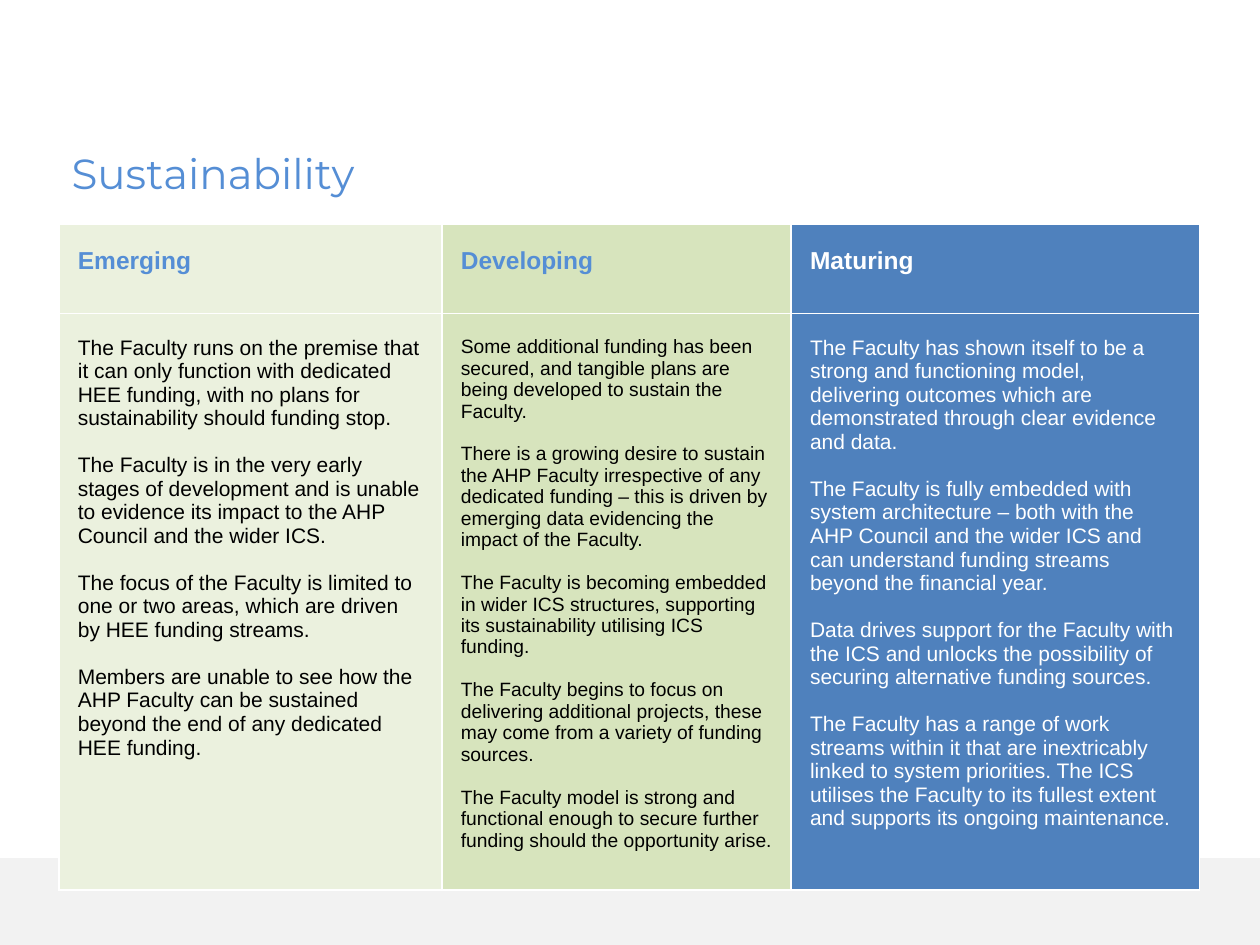
import pptx
import pptx.dml.color
import pptx.enum.shapes
import pptx.enum.text
import pptx.oxml
import pptx.oxml.ns
import pptx.util
from pptx.util import Cm, Pt

# Content
TITLE = "Sustainability"
STAGES = [
    dict(heading="Emerging", width=7.72, fill="EBF1DE", heading_color="558ED5",
         body_color="000000", size=12, body=[
        "The Faculty runs on the premise that it can only function with dedicated HEE funding, with no plans for sustainability should funding stop.",
        "The Faculty is in the very early stages of development and is unable to evidence its impact to the AHP Council and the wider ICS.",
        "The focus of the Faculty is limited to one or two areas, which are driven by HEE funding streams.",
        "Members are unable to see how the AHP Faculty can be sustained beyond the end of any dedicated HEE funding.",
    ]),
    dict(heading="Developing", width=7.04, fill="D7E4BD", heading_color="558ED5",
         body_color="000000", size=11, body=[
        "Some additional funding has been secured, and tangible plans are being developed to sustain the Faculty.",
        "There is a growing desire to sustain the AHP Faculty irrespective of any dedicated funding – this is driven by emerging data evidencing the impact of the Faculty.",
        "The Faculty is becoming embedded in wider ICS structures, supporting its sustainability utilising ICS funding.",
        "The Faculty begins to focus on delivering additional projects, these may come from a variety of funding sources.",
        "The Faculty model is strong and functional enough to secure further funding should the opportunity arise.",
    ]),
    dict(heading="Maturing", width=8.23, fill="4F81BD", heading_color="FFFFFF",
         body_color="FFFFFF", size=12, body=[
        "The Faculty has shown itself to be a strong and functioning model, delivering outcomes which are demonstrated through clear evidence and data.",
        "The Faculty is fully embedded with system architecture – both with the AHP Council and the wider ICS and can understand funding streams beyond the financial year.",
        "Data drives support for the Faculty with the ICS and unlocks the possibility of securing alternative funding sources.",
        "The Faculty has a range of work streams within it that are inextricably linked to system priorities. The ICS utilises the Faculty to its fullest extent and supports its ongoing maintenance.",
    ]),
]
ROW_HEIGHTS = [1.8, 11.05]
LEFT = 1.19
LINE_HEIGHT = 1.12  # one line, relative to the text size


def set_color(target, color):
    """Colour a font directly, or a fill after making it solid."""
    if hasattr(target, "solid"):
        target.solid()
        target = target.fore_color
    else:
        target = target.color
    target.rgb = pptx.dml.color.RGBColor.from_string(color)


def write(frame, paragraphs, *, size, color, font="Arial", bold=False):
    for index, text in enumerate(paragraphs):
        paragraph = frame.add_paragraph() if index else frame.paragraphs[0]
        paragraph.text = text
        paragraph.alignment = pptx.enum.text.PP_ALIGN.LEFT
        if index:
            paragraph.space_before = Pt(round(size * LINE_HEIGHT, 1))
        paragraph.font.name = font
        paragraph.font.size = Pt(size)
        paragraph.font.bold = bold
        set_color(paragraph.font, color)


def format_cell(cell, fill):
    cell.margin_left = cell.margin_right = Cm(0.38)
    cell.margin_top, cell.margin_bottom = Cm(0.46), Cm(0.1)
    properties = cell._tc.get_or_add_tcPr()
    for side in ("lnL", "lnR", "lnT", "lnB"):
        properties.append(pptx.oxml.parse_xml(
            f'<a:{side} {pptx.oxml.ns.nsdecls("a")} w="{Pt(1)}"><a:solidFill>'
            f'<a:srgbClr val="FFFFFF"/></a:solidFill></a:{side}>'))
    set_color(cell.fill, fill)


presentation = pptx.Presentation()
presentation.slide_width, presentation.slide_height = Cm(25.4), Cm(19.05)
slide = presentation.slides.add_slide(presentation.slide_layouts[5])

# Footer band
band = slide.shapes.add_shape(pptx.enum.shapes.MSO_SHAPE.RECTANGLE,
                              0, Cm(17.3), Cm(25.4), Cm(1.75))
band.shadow.inherit = False
set_color(band.fill, "F2F2F2")
band.line.fill.background()

# Title
title = slide.shapes.title
title.left, title.top, title.width, title.height = Cm(LEFT), Cm(2.84), Cm(6.93), Cm(1.27)
title.text_frame.word_wrap = False
title.text_frame.auto_size = pptx.enum.text.MSO_AUTO_SIZE.SHAPE_TO_FIT_TEXT
title.text_frame.vertical_anchor = pptx.enum.text.MSO_ANCHOR.TOP
write(title.text_frame, [TITLE], size=24, color="558ED5", font="Montserrat")

# Maturity table: one column per stage
table = slide.shapes.add_table(
    len(ROW_HEIGHTS), len(STAGES), Cm(LEFT), Cm(4.52),
    Cm(sum(stage["width"] for stage in STAGES)), Cm(sum(ROW_HEIGHTS))).table
table.horz_banding = False
for row, height in zip(table.rows, ROW_HEIGHTS):
    row.height = Cm(height)
for column, stage in enumerate(STAGES):
    table.columns[column].width = Cm(stage["width"])
    heading, body = table.cell(0, column), table.cell(1, column)
    for cell in (heading, body):
        format_cell(cell, stage["fill"])
    write(heading.text_frame, [stage["heading"]], size=14,
          color=stage["heading_color"], bold=True)
    write(body.text_frame, stage["body"], size=stage["size"], color=stage["body_color"])

presentation.save("out.pptx")
